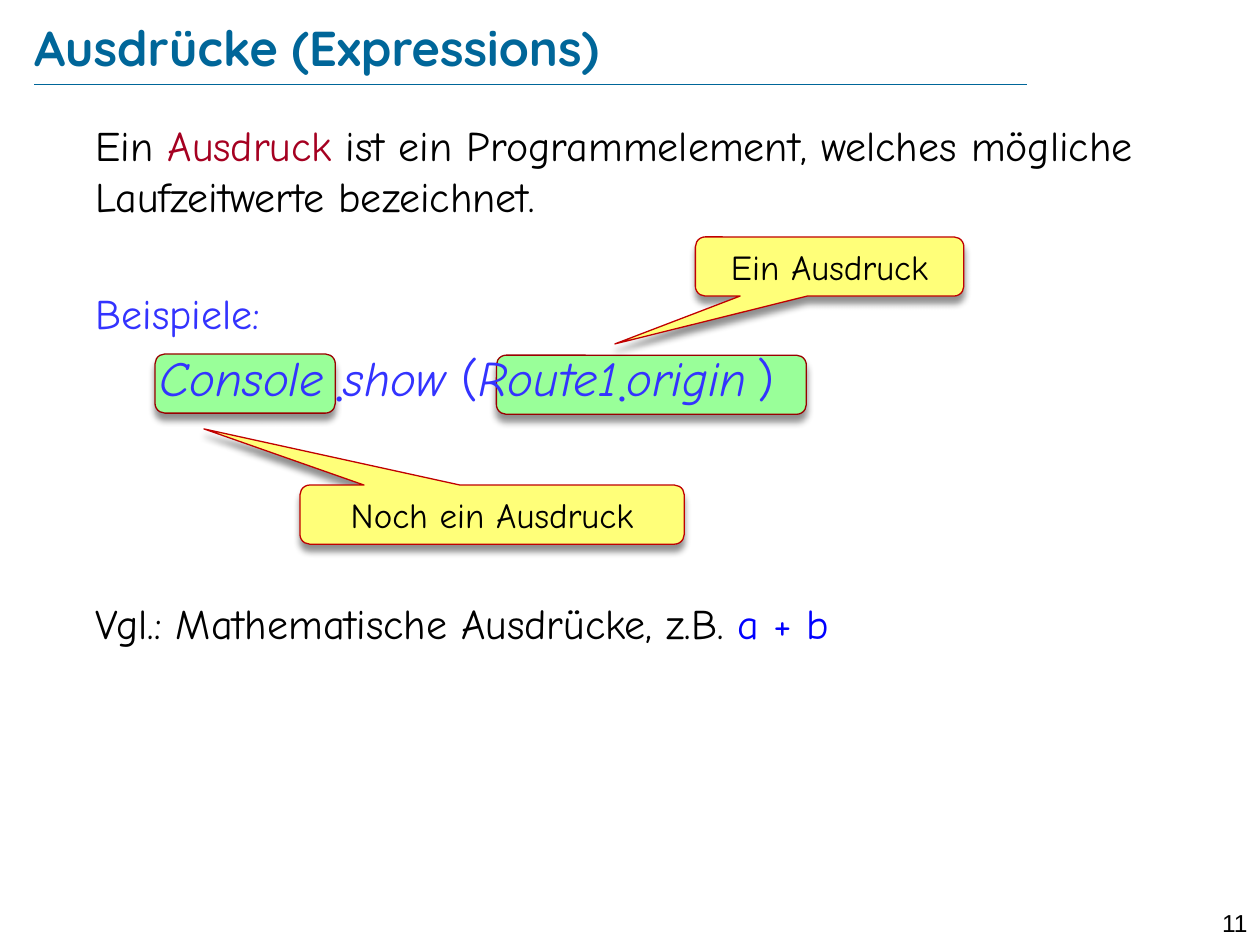
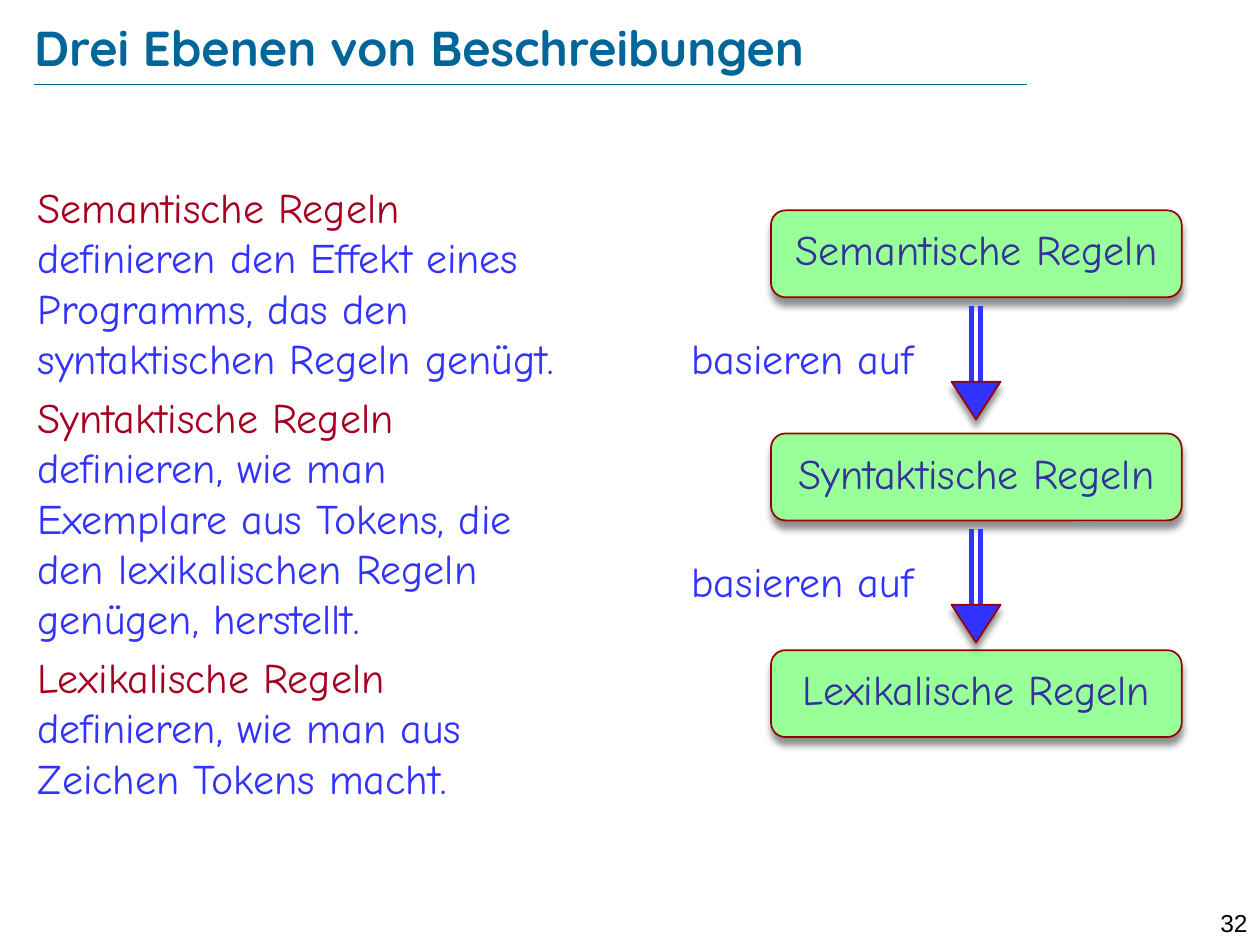
from dataclasses import dataclass
from typing import NamedTuple, Optional, Sequence

from lxml import etree
from pptx import Presentation
from pptx.dml.color import RGBColor
from pptx.enum import shapes, text
from pptx.oxml import ns
from pptx.util import Pt

BLACK = RGBColor(0x00, 0x00, 0x00)
TEAL = RGBColor(0x00, 0x66, 0x99)
CRIMSON = RGBColor(0xA5, 0x00, 0x21)
BLUE = RGBColor(0x33, 0x33, 0xFF)
PURE_BLUE = RGBColor(0x00, 0x00, 0xFF)
INDIGO = RGBColor(0x33, 0x33, 0x99)
GREEN = RGBColor(0x99, 0xFF, 0x99)
YELLOW = RGBColor(0xFF, 0xFF, 0x79)
DARK_RED = RGBColor(0x99, 0x00, 0x00)
RED = RGBColor(0xC0, 0x00, 0x00)

BODY_FONT = "Comic Neue"
TITLE_FONT = "Quicksand"
NUMBER_FONT = "Arial"

LEFT, CENTER, RIGHT = text.PP_ALIGN.LEFT, text.PP_ALIGN.CENTER, text.PP_ALIGN.RIGHT
TOP, MIDDLE = text.MSO_ANCHOR.TOP, text.MSO_ANCHOR.MIDDLE
Shape = shapes.MSO_SHAPE


class Rect(NamedTuple):
    """Left, top, width and height in points."""
    left: float
    top: float
    width: float
    height: float


class Insets(NamedTuple):
    left: float = 7.2
    top: float = 3.6
    right: float = 7.2
    bottom: float = 3.6


@dataclass(frozen=True)
class Span:
    text: str
    color: RGBColor = BLACK
    size: float = 24
    italic: bool = False
    bold: bool = False
    lowered: bool = False
    font: str = BODY_FONT


@dataclass(frozen=True)
class Para:
    spans: Sequence[Span]
    align: text.PP_ALIGN = LEFT
    space_before: float = 0
    line_spacing: Optional[float] = None
    indent: float = 0


@dataclass(frozen=True)
class Callout:
    label: str
    rect: Rect
    tip: tuple[float, float]


def points(rect: Rect) -> list[int]:
    return [Pt(length) for length in rect]


def write(frame, paras: Sequence[Para], insets: Insets = Insets(),
          anchor=TOP, wrap: bool = True) -> None:
    frame.word_wrap = wrap
    frame.vertical_anchor = anchor
    frame.margin_left, frame.margin_top, frame.margin_right, frame.margin_bottom = map(Pt, insets)
    for index, para in enumerate(paras):
        paragraph = frame.paragraphs[0] if index == 0 else frame.add_paragraph()
        paragraph.alignment = para.align
        if para.indent:
            paragraph._p.get_or_add_pPr().set("marL", str(Pt(para.indent)))
        if index:
            paragraph.space_before = Pt(para.space_before)
        if para.line_spacing:
            paragraph.line_spacing = para.line_spacing
        for span in para.spans:
            run = paragraph.add_run()
            run.text = span.text
            font = run.font
            font.name, font.size = span.font, Pt(span.size)
            font.bold, font.italic = span.bold, span.italic
            font.color.rgb = span.color
            if span.lowered:
                font._element.set("baseline", "-20000")


def add_text(page, rect: Rect, paras: Sequence[Para], **options) -> None:
    write(page.shapes.add_textbox(*points(rect)).text_frame, paras, **options)


def add_drop_shadow(shape) -> None:
    """Cast a soft shadow straight down."""
    shape.shadow.inherit = False
    effects = shape._element.spPr.find(ns.qn("a:effectLst"))
    shadow = etree.SubElement(effects, ns.qn("a:outerShdw"), blurRad=str(Pt(4)),
                              dist=str(Pt(4)), dir="5400000", rotWithShape="0")
    color = etree.SubElement(shadow, ns.qn("a:srgbClr"), val=str(BLACK))
    etree.SubElement(color, ns.qn("a:alpha"), val="43000")


def add_shape(page, kind, rect: Rect, fill: RGBColor, line: RGBColor, width: float):
    shape = page.shapes.add_shape(kind, *points(rect))
    shape.fill.solid()
    shape.fill.fore_color.rgb = fill
    shape.line.color.rgb = line
    shape.line.width = Pt(width)
    add_drop_shadow(shape)
    return shape


def add_line(page, start: tuple[float, float], end: tuple[float, float],
             color: RGBColor, width: float) -> None:
    line = page.shapes.add_connector(shapes.MSO_CONNECTOR.STRAIGHT,
                                     *map(Pt, start), *map(Pt, end))
    line.line.color.rgb = color
    line.line.width = Pt(width)
    etree.SubElement(line._element.spPr, ns.qn("a:effectLst"))


def add_callout(page, callout: Callout) -> None:
    shape = add_shape(page, Shape.ROUNDED_RECTANGULAR_CALLOUT, callout.rect, YELLOW, RED, 0.75)
    shape.adjustments[0], shape.adjustments[1] = callout.tip
    write(shape.text_frame, [Para([Span(callout.label, size=20)], CENTER)], anchor=MIDDLE)


def add_double_arrow(page, center: float, top: float) -> None:
    for x in (center - 2.5, center + 2.5):
        add_line(page, (x, top), (x, top + 55), BLUE, 3)
    head = add_shape(page, Shape.ISOSCELES_TRIANGLE,
                     Rect(center - 14, top + 43.2, 28, 21.6), BLUE, DARK_RED, 1)
    head.rotation = 180


def add_page(deck, title: str, number: int):
    page = deck.slides.add_slide(deck.slide_layouts[6])
    add_line(page, (19.5, 48.2), (587, 48.2), TEAL, 0.25)
    add_text(page, Rect(680.4, 515.5, 39.6, 17.3),
             [Para([Span(str(number), size=14, font=NUMBER_FONT)], RIGHT)])
    add_text(page, Rect(19.5, 9.4, 625.7, 34.6),
             [Para([Span(title, TEAL, 28, bold=True, font=TITLE_FONT)])],
             insets=Insets(0, 0, 0, 0), anchor=MIDDLE)
    return page


def build_expressions(deck) -> None:
    page = add_page(deck, "Ausdrücke (Expressions)", 11)
    for highlight in (Rect(88.6, 202.3, 103, 33.8), Rect(283.7, 203, 177.1, 33.8)):
        add_shape(page, Shape.ROUNDED_RECTANGLE, highlight, GREEN, DARK_RED, 0.75)

    def code(part: str, italic: bool = False) -> Span:
        return Span(part, BLUE, 28, italic)

    dot = Span("•", BLUE, 28, lowered=True)
    thin_gap = Span(" ", BLUE, 18, italic=True)
    call = [code("Console", True), thin_gap, dot, code("show", True), code(" ("),
            code("Route1", True), dot, code("origin", True), thin_gap, code(")")]
    add_text(page, Rect(47.5, 64.8, 627.8, 392.4), [
        Para([Span("Ein "), Span("Ausdruck", CRIMSON),
              Span(" ist ein Programmelement, welches mögliche Laufzeitwerte bezeichnet.")]),
        Para([Span("Beispiele:", BLUE)], space_before=38.4),
        Para(call, space_before=5.6, indent=36.7),
        Para([Span("Vgl.: Mathematische Ausdrücke, z.B. "), Span("a + b", PURE_BLUE)],
             space_before=105.6),
    ])
    for callout in (
        Callout("Noch ein Ausdruck", Rect(171.4, 277.2, 219.6, 33.8), (-0.75, -1.45)),
        Callout("Ein Ausdruck", Rect(397.4, 135.4, 153.4, 33.8), (-0.8, 1.31)),
    ):
        add_callout(page, callout)


def build_levels(deck) -> None:
    page = add_page(deck, "Drei Ebenen von Beschreibungen", 32)
    levels = {
        "Semantische Regeln":
            "definieren den Effekt eines Programms, das den syntaktischen Regeln genügt.",
        "Syntaktische Regeln":
            "definieren, wie man Exemplare aus Tokens, die den lexikalischen Regeln "
            "genügen, herstellt.",
        "Lexikalische Regeln": "definieren, wie man aus Zeichen Tokens macht.",
    }
    add_text(page, Rect(14.4, 100, 325.4, 402.5), [
        Para([Span(f"{level} ", CRIMSON), Span(meaning, BLUE)], space_before=4.8)
        for level, meaning in levels.items()
    ])

    level_left, level_width, level_height = 440.6, 234.7, 49.7
    level_tops = (120.2, 247.7, 371.5)
    for level, top in zip(levels, level_tops):
        box = add_shape(page, Shape.ROUNDED_RECTANGLE,
                        Rect(level_left, top, level_width, level_height), GREEN, DARK_RED, 1)
        write(box.text_frame, [Para([Span(level, INDIGO)], CENTER, line_spacing=0.8)],
              insets=Insets(left=0, right=0), anchor=MIDDLE)
    for top in level_tops[:-1]:
        add_text(page, Rect(388.1, top + 66, 155.2, 36.7),
                 [Para([Span("basieren auf", BLUE)])])
        add_double_arrow(page, level_left + level_width / 2 - 0.2, top + 54.7)


def main() -> None:
    deck = Presentation()
    deck.slide_width, deck.slide_height = Pt(720), Pt(540)
    build_expressions(deck)
    build_levels(deck)
    deck.save("out.pptx")


if __name__ == "__main__":
    main()
